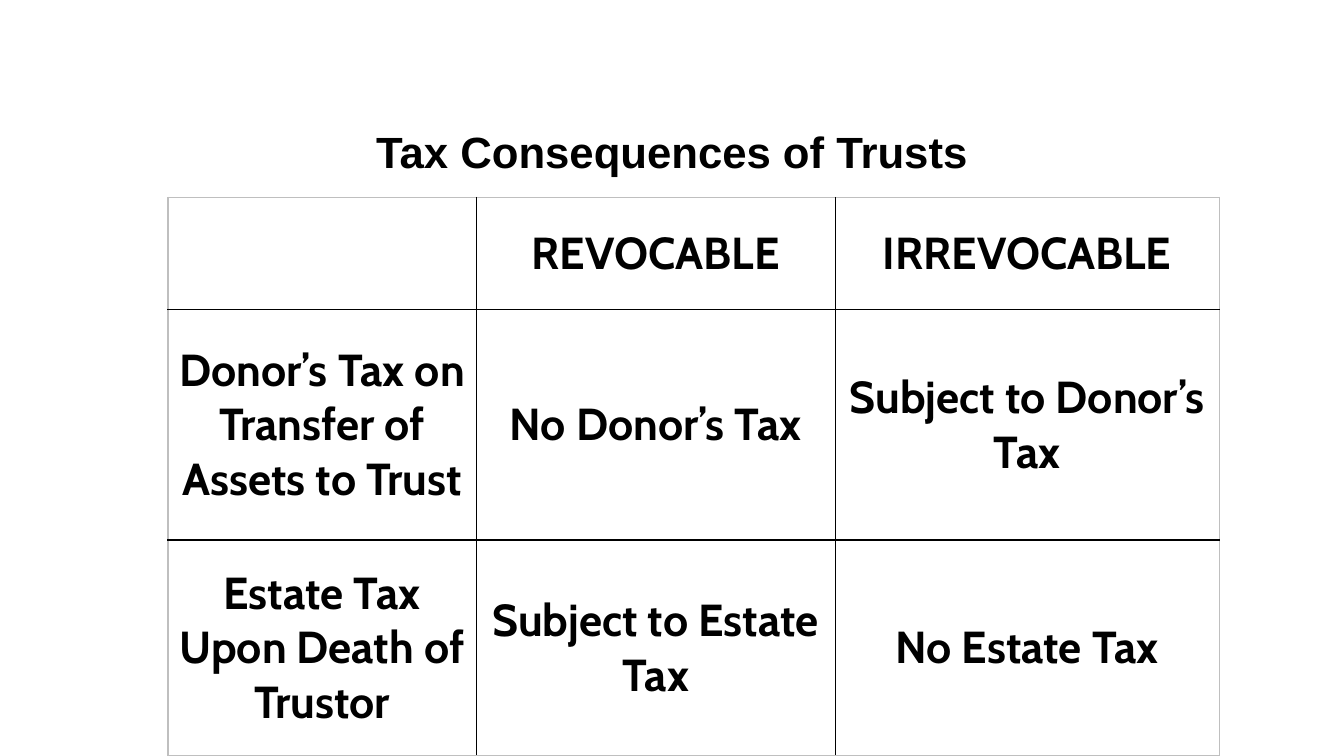
import pptx
import pptx.dml.color
import pptx.enum.text
import pptx.oxml
import pptx.oxml.ns
import pptx.util

Pt = pptx.util.Pt
BLACK = pptx.dml.color.RGBColor(0x00, 0x00, 0x00)
GRAY = pptx.dml.color.RGBColor(0xBF, 0xBF, 0xBF)
WHITE = pptx.dml.color.RGBColor(0xFF, 0xFF, 0xFF)

COLUMN_WIDTHS = [220.3, 256.3, 274.4]
ROW_HEIGHTS = [79.9, 164.9, 154.1]
TAX_TABLE = [
    ["", "REVOCABLE", "IRREVOCABLE"],
    ["Donor’s Tax on Transfer of Assets to Trust", "No Donor’s Tax", "Subject to Donor’s Tax"],
    ["Estate Tax Upon Death of Trustor", "Subject to Estate Tax", "No Estate Tax"],
]


class SlideBuilder:
    """Holds the text style and the current slide, and adds elements to it."""

    title_font = "Arial"
    title_size = 31.2
    table_font = "Cabin"
    table_size = 32
    border_width = 1

    def __init__(self, slide):
        self.slide = slide

    def style_text(self, text_frame, text, font_name, size):
        text_frame.word_wrap = True
        paragraph = text_frame.paragraphs[0]
        paragraph.text = text
        paragraph.alignment = pptx.enum.text.PP_ALIGN.CENTER
        paragraph.font.name = font_name
        paragraph.font.size = Pt(size)
        paragraph.font.bold = True
        paragraph.font.color.rgb = BLACK

    def add_title(self, text, left, top, width, height):
        shape = self.slide.shapes.add_textbox(Pt(left), Pt(top), Pt(width), Pt(height))
        shape.text_frame.vertical_anchor = pptx.enum.text.MSO_ANCHOR.MIDDLE
        self.style_text(shape.text_frame, text, self.title_font, self.title_size)

    def add_border(self, cell, side, color):
        namespace = pptx.oxml.ns.nsdecls("a")
        border = pptx.oxml.parse_xml(
            f'<a:ln{side} {namespace} w="{Pt(self.border_width)}">'
            f'<a:solidFill><a:srgbClr val="{color}"/></a:solidFill></a:ln{side}>'
        )
        cell._tc.get_or_add_tcPr().append(border)

    def style_cell(self, cell, text, outer_sides):
        for side in "LRTB":
            self.add_border(cell, side, GRAY if outer_sides[side] else BLACK)
        cell.fill.solid()
        cell.fill.fore_color.rgb = WHITE
        cell.margin_left = cell.margin_right = Pt(4.3)
        cell.margin_top = cell.margin_bottom = Pt(2.2)
        cell.vertical_anchor = pptx.enum.text.MSO_ANCHOR.MIDDLE
        self.style_text(cell.text_frame, text, self.table_font, self.table_size)

    def add_table(self, rows, left, top, column_widths, row_heights):
        last_row, last_column = len(row_heights) - 1, len(column_widths) - 1
        table = self.slide.shapes.add_table(
            len(row_heights), len(column_widths), Pt(left), Pt(top),
            Pt(sum(column_widths)), Pt(sum(row_heights)),
        ).table
        table.first_row = table.horz_banding = False
        for column, width in zip(table.columns, column_widths):
            column.width = Pt(width)
        for row, height in zip(table.rows, row_heights):
            row.height = Pt(height)
        for row_index, texts in enumerate(rows):
            for column_index, text in enumerate(texts):
                outer_sides = {
                    "L": column_index == 0,
                    "R": column_index == last_column,
                    "T": row_index == 0,
                    "B": row_index == last_row,
                }
                self.style_cell(table.cell(row_index, column_index), text, outer_sides)


def main():
    presentation = pptx.Presentation()
    presentation.slide_width = Pt(960)
    presentation.slide_height = Pt(540)
    slide = presentation.slides.add_slide(presentation.slide_layouts[6])
    builder = SlideBuilder(slide)
    builder.add_title("Tax Consequences of Trusts", 120, 68, 720, 80)
    builder.add_table(TAX_TABLE, 120, 141, COLUMN_WIDTHS, ROW_HEIGHTS)
    presentation.save("out.pptx")


if __name__ == "__main__":
    main()
